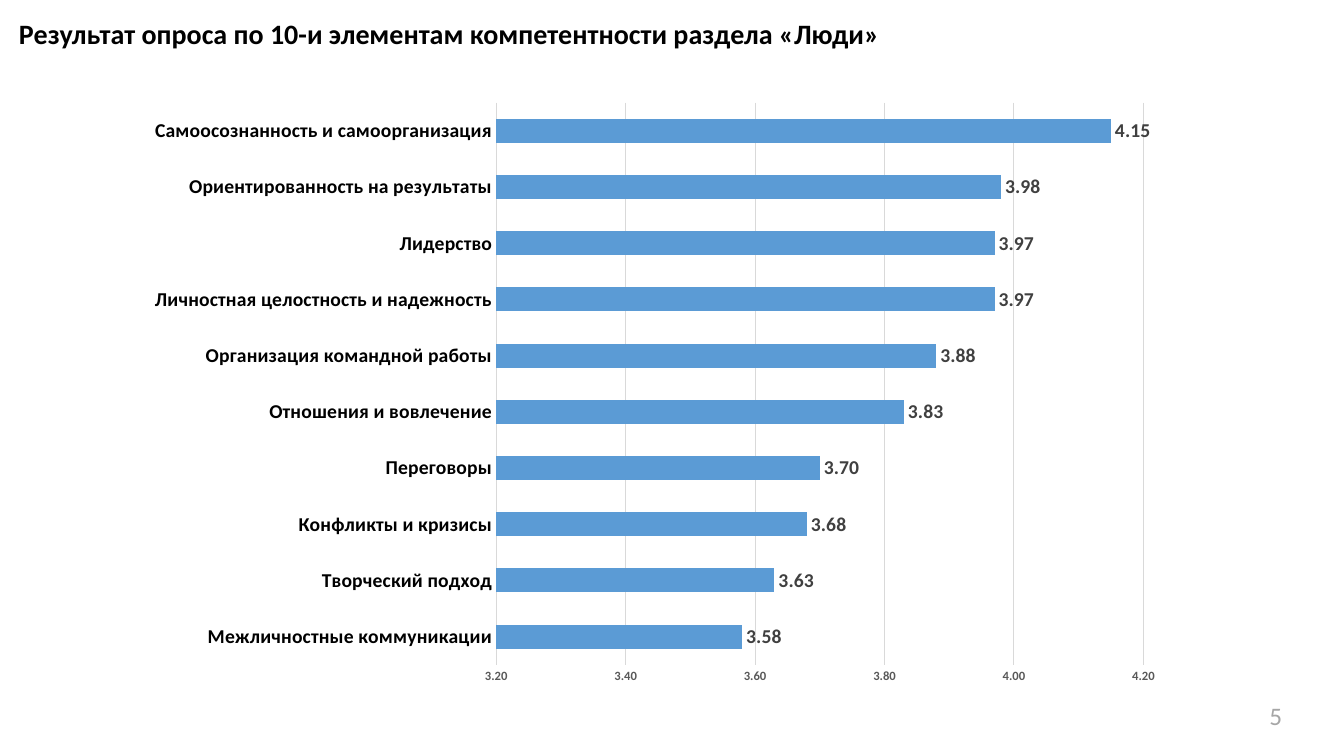
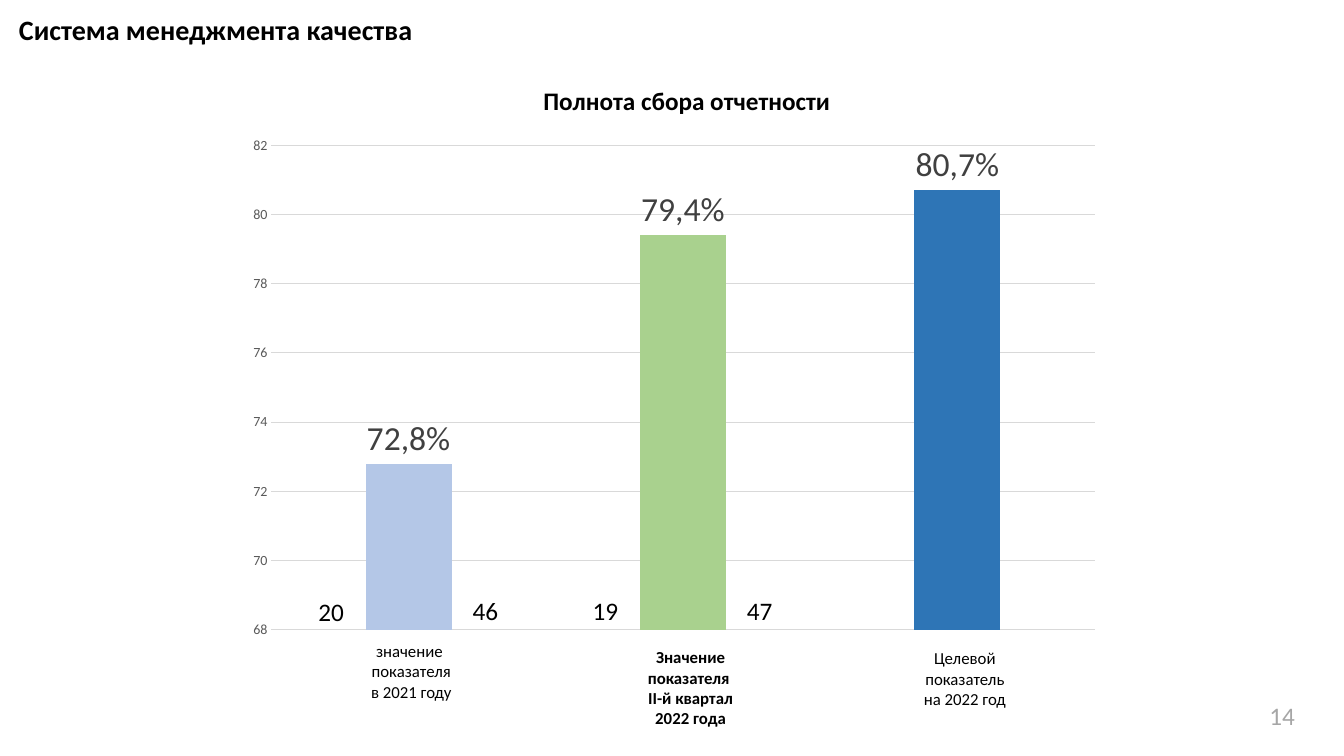
from pptx import Presentation
from pptx.chart.data import CategoryChartData
from pptx.dml.color import RGBColor
from pptx.enum.chart import XL_CHART_TYPE as ChartType
from pptx.enum.chart import XL_LABEL_POSITION as LabelPosition
from pptx.enum.chart import XL_TICK_MARK as TickMark
from pptx.enum.text import MSO_AUTO_SIZE as AutoSize
from pptx.enum.text import PP_ALIGN as Align
from pptx.util import Pt

# Shared style, 100 px to the inch
PX = 9144
FONT = "Calibri"
BLACK = RGBColor(0x00, 0x00, 0x00)
DARK_GRAY = RGBColor(0x40, 0x40, 0x40)
AXIS_GRAY = RGBColor(0x59, 0x59, 0x59)
PAGE_GRAY = RGBColor(0xA6, 0xA6, 0xA6)
GRID_GRAY = RGBColor(0xD9, 0xD9, 0xD9)
BLUE = RGBColor(0x5B, 0x9B, 0xD5)
PALE_BLUE = RGBColor(0xB4, 0xC7, 0xE7)
GREEN = RGBColor(0xA9, 0xD1, 0x8E)
DEEP_BLUE = RGBColor(0x2E, 0x75, 0xB6)

# Survey content, lowest score first
SURVEY_TITLE = "Результат опроса по 10-и элементам компетентности раздела «Люди»"
SURVEY = [
    ("Межличностные коммуникации", 3.58),
    ("Творческий подход", 3.63),
    ("Конфликты и кризисы", 3.68),
    ("Переговоры", 3.70),
    ("Отношения и вовлечение", 3.83),
    ("Организация командной работы", 3.88),
    ("Личностная целостность и надежность", 3.97),
    ("Лидерство", 3.97),
    ("Ориентированность на результаты", 3.98),
    ("Самоосознанность и самоорганизация", 4.15),
]

# Quality content: category, value, bar label, colour
QUALITY_TITLE = "Система менеджмента качества"
CHART_TITLE = "Полнота сбора отчетности"
REPORTING = [
    ("1", 72.8, "72,8%", PALE_BLUE),
    ("2", 79.4, "79,4%", GREEN),
    ("3", 80.7, "80,7%", DEEP_BLUE),
]
# Captions: left, top, height, bold, paragraphs
CAPTIONS = [
    (351, 631, 71, False, ["значение ", "показателя", "в 2021 году"]),
    (628, 637, 91, True, ["Значение показателя ", "II-й квартал 2022 года"]),
    (900, 638, 71, False, ["Целевой показатель на 2022 год"]),
]
# Counts beside the bars: text, left, top
COUNTS = [("20", 306, 587), ("46", 459, 586), ("19", 578, 586), ("47", 731, 586)]


def style_font(font, size, color, bold=False):
    font.name = FONT
    font.size = Pt(size)
    font.bold = bold
    font.color.rgb = color


def add_text(slide, box, paragraphs, size, color=BLACK, bold=False,
             wrap=False, align=Align.LEFT):
    shape = slide.shapes.add_textbox(*(length * PX for length in box))
    frame = shape.text_frame
    frame.word_wrap = wrap
    frame.auto_size = AutoSize.SHAPE_TO_FIT_TEXT
    for index, text in enumerate(paragraphs):
        paragraph = frame.add_paragraph() if index else frame.paragraphs[0]
        paragraph.alignment = align
        run = paragraph.add_run()
        run.text = text
        style_font(run.font, size, color, bold)


def add_page(presentation, title, title_top, title_width, number):
    slide = presentation.slides.add_slide(presentation.slide_layouts[6])
    add_text(slide, (1249, 690, 85, 40), [number], 18, PAGE_GRAY, wrap=True)
    add_text(slide, (9, title_top, title_width, 44), [title], 20, bold=True)
    return slide


def add_bar_chart(slide, box, kind, categories, values, scale, axis_size,
                  axis_bold, axis_format, gap, label_size, label_bold):
    data = CategoryChartData()
    data.categories = categories
    data.add_series("Series 1", values)
    frame = slide.shapes.add_chart(kind, *(length * PX for length in box), data)
    chart = frame.chart
    chart.has_legend = False
    chart.has_title = False
    style_font(chart.font, 10, BLACK)

    # Value axis and grid
    axis = chart.value_axis
    axis.minimum_scale, axis.maximum_scale, axis.major_unit = scale
    axis.major_tick_mark = axis.minor_tick_mark = TickMark.NONE
    axis.format.line.fill.background()
    axis.has_major_gridlines = True
    grid_line = axis.major_gridlines.format.line
    grid_line.color.rgb = GRID_GRAY
    grid_line.width = Pt(0.75)
    axis.tick_labels.number_format = axis_format
    axis.tick_labels.number_format_is_linked = False
    style_font(axis.tick_labels.font, axis_size, AXIS_GRAY, axis_bold)

    # Bars and their labels
    plot = chart.plots[0]
    plot.vary_by_categories = False
    plot.gap_width = gap
    series = plot.series[0]
    series.format.fill.solid()
    series.format.fill.fore_color.rgb = BLUE
    labels = series.data_labels
    labels.show_value = True
    labels.number_format = axis_format
    labels.number_format_is_linked = False
    labels.position = LabelPosition.OUTSIDE_END
    style_font(labels.font, label_size, DARK_GRAY, label_bold)
    return chart


def build_survey(presentation):
    slide = add_page(presentation, SURVEY_TITLE, 11, 877, "5")
    categories, values = zip(*SURVEY)
    chart = add_bar_chart(slide, (133, 90, 1033, 600), ChartType.BAR_CLUSTERED,
                          categories, values, (3.2, 4.2, 0.2), 9, True, "0.00",
                          135, 14, True)
    axis = chart.category_axis
    axis.major_tick_mark = axis.minor_tick_mark = TickMark.NONE
    axis.format.line.color.rgb = GRID_GRAY
    axis.format.line.width = Pt(0.75)
    style_font(axis.tick_labels.font, 14, BLACK, True)


def build_quality(presentation):
    slide = add_page(presentation, QUALITY_TITLE, 7, 413, "14")
    categories, values, bar_labels, colors = zip(*REPORTING)
    chart = add_bar_chart(slide, (234, 126, 869, 517), ChartType.COLUMN_CLUSTERED,
                          categories, values, (68, 82, 2), 10, False, "General",
                          219, 24, False)
    chart.category_axis.visible = False
    plot = chart.plots[0]
    plot.overlap = -27
    for index, (text, color) in enumerate(zip(bar_labels, colors)):
        point = plot.series[0].points[index]
        point.format.fill.solid()
        point.format.fill.fore_color.rgb = color
        label = point.data_label
        run = label.text_frame.paragraphs[0].add_run()
        run.text = text
        style_font(run.font, 24, DARK_GRAY)
        label.position = LabelPosition.OUTSIDE_END

    # Texts around the chart
    add_text(slide, (529, 80, 307, 40), [CHART_TITLE], 18, bold=True)
    for left, top, height, bold, paragraphs in CAPTIONS:
        add_text(slide, (left, top, 114, height), paragraphs, 12, bold=bold,
                 wrap=True, align=Align.CENTER)
    for text, left, top in COUNTS:
        add_text(slide, (left, top, 46, 40), [text], 18)


def main():
    presentation = Presentation()
    presentation.slide_width = 1333 * PX
    presentation.slide_height = 750 * PX
    build_survey(presentation)
    build_quality(presentation)
    presentation.save("out.pptx")


if __name__ == "__main__":
    main()
